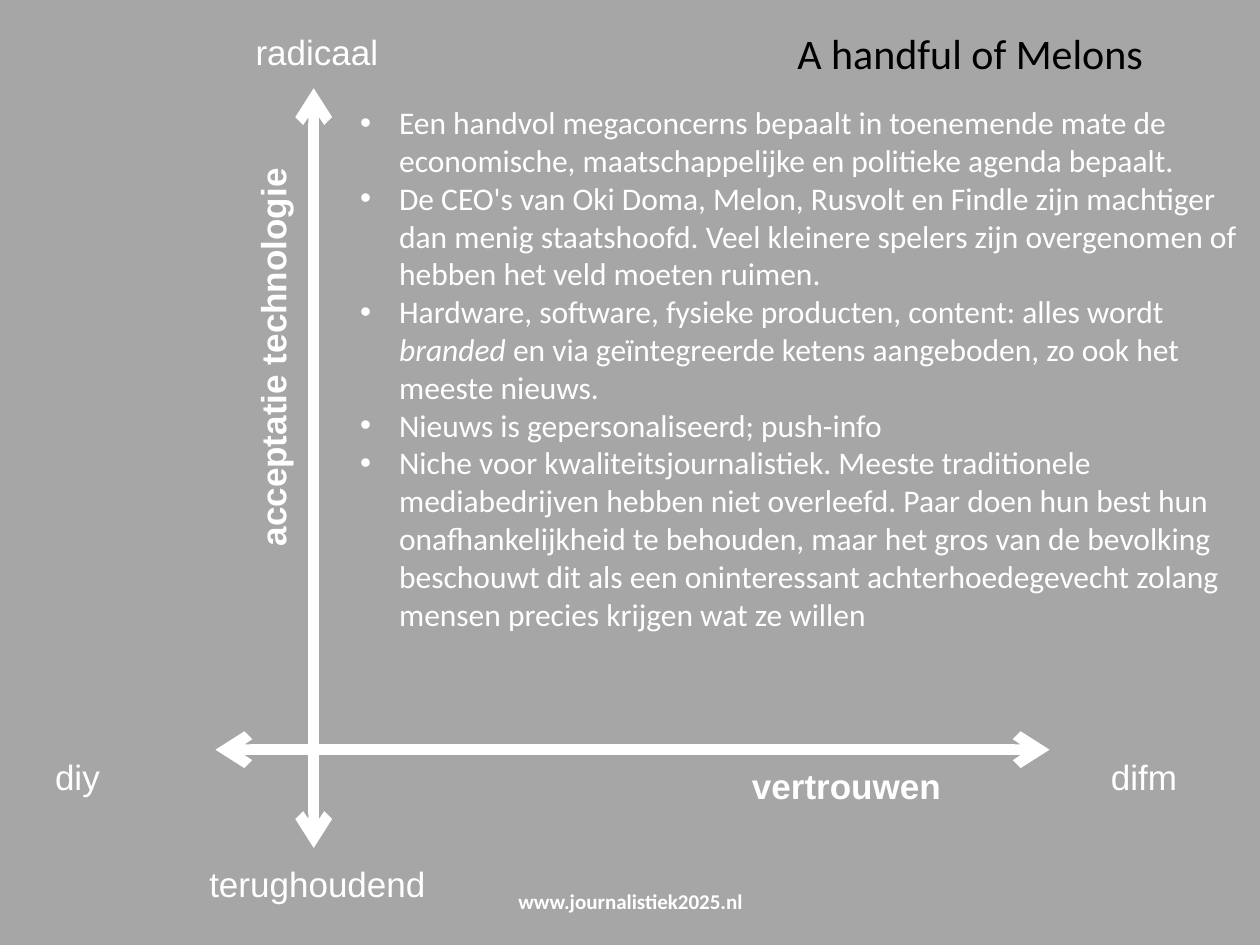
from dataclasses import dataclass

from lxml import etree
from pptx import Presentation
from pptx import util as u
from pptx.dml.color import RGBColor
from pptx.enum import shapes, text
from pptx.oxml.ns import qn

WHITE = RGBColor(0xFF, 0xFF, 0xFF)
BLACK = RGBColor(0, 0, 0)
GREY = RGBColor(0xA6, 0xA6, 0xA6)
CELL = u.Inches(0.1)
COLS, ROWS = 100, 75
LEFT, MID, RIGHT = text.PP_ALIGN.LEFT, text.PP_ALIGN.CENTER, text.PP_ALIGN.RIGHT


@dataclass
class Axis:
    """An arrow between two grid points."""
    start: tuple[float, float]
    end: tuple[float, float]


@dataclass
class Label:
    """A line of text in a box of grid cells."""
    words: str
    box: tuple[float, float, float, float]
    size: int = 20
    font: str = "Arial"
    color: RGBColor = WHITE
    bold: bool = False
    align: text.PP_ALIGN = MID
    anchor: text.MSO_ANCHOR = text.MSO_ANCHOR.TOP
    turn: int = 0


AXES = [
    Axis((24.9, 67.3), (24.9, 7)),
    Axis((17.1, 59.5), (83.3, 59.5)),
]
LABELS = [
    Label("vertrouwen", (58.7, 60.2, 46, 4.4), bold=True, align=LEFT),
    Label("acceptatie technologie", (1.2, 21.7, 40.9, 4.4), bold=True,
          align=LEFT, turn=270),
    Label("difm", (78.7, 59.5, 24.2, 4.4)),
    Label("diy", (-6.7, 59.5, 25.7, 4.4)),
    Label("radicaal", (13.7, 1.9, 22.9, 4.4)),
    Label("terughoudend", (13.8, 68, 22.8, 4.4)),
    Label("A handful of Melons", (59.7, 1.7, 32, 5.1), 24, "Calibri", BLACK,
          align=RIGHT),
    Label("www.journalistiek2025.nl", (34.2, 69.5, 31.7, 4), 12, "Calibri",
          bold=True, anchor=text.MSO_ANCHOR.MIDDLE),
]
BODY = (27.6, 7.7, 72, 52.5)
ITALIC = "branded "
POINTS = [
    ["Een handvol megaconcerns bepaalt in toenemende mate de economische, "
     "maatschappelijke en politieke agenda bepaalt."],
    ["De CEO's van Oki Doma, Melon, Rusvolt en Findle zijn machtiger dan menig "
     "staatshoofd. Veel kleinere spelers zijn overgenomen of hebben het veld "
     "moeten ruimen."],
    ["Hardware, software, fysieke producten, content: alles wordt ", ITALIC,
     "en via geïntegreerde ketens aangeboden, zo ook het meeste nieuws."],
    ["Nieuws is gepersonaliseerd; push-info"],
    ["Niche voor kwaliteitsjournalistiek. Meeste traditionele mediabedrijven "
     "hebben niet overleefd. Paar doen hun best hun onafhankelijkheid te "
     "behouden, maar het gros van de bevolking beschouwt dit als een "
     "oninteressant achterhoedegevecht zolang mensen precies krijgen wat ze "
     "willen"],
]


def grid(*cells: float) -> list[int]:
    """Turn grid cells into lengths."""
    return [round(cell * CELL) for cell in cells]


def style(run, size: int, font: str, color: RGBColor, bold: bool = False) -> None:
    """Format one run."""
    run.font.size = u.Pt(size)
    run.font.name = font
    run.font.color.rgb = color
    run.font.bold = bold


def draw_axis(slide, axis: Axis) -> None:
    """Draw a line with an arrowhead at both ends."""
    line = slide.shapes.add_connector(
        shapes.MSO_CONNECTOR.STRAIGHT, *grid(*axis.start, *axis.end))
    line.line.color.rgb = WHITE
    line.line.width = u.Pt(6)
    props = line.line._get_or_add_ln()
    for end in ("a:headEnd", "a:tailEnd"):
        etree.SubElement(props, qn(end), type="arrow")
    etree.SubElement(line._element.spPr, qn("a:effectLst"))


def draw_label(slide, label: Label) -> None:
    """Draw one label."""
    box = slide.shapes.add_textbox(*grid(*label.box))
    box.rotation = label.turn
    frame = box.text_frame
    frame.word_wrap = True
    frame.vertical_anchor = label.anchor
    frame.text = label.words
    para = frame.paragraphs[0]
    para.alignment = label.align
    style(para.runs[0], label.size, label.font, label.color, label.bold)


def draw_points(slide, points: list[list[str]]) -> None:
    """Draw the bulleted text."""
    frame = slide.shapes.add_textbox(*grid(*BODY)).text_frame
    frame.word_wrap = True
    for num, parts in enumerate(points):
        para = frame.add_paragraph() if num else frame.paragraphs[0]
        props = para._p.get_or_add_pPr()
        indent = u.Inches(0.31)
        props.set("marL", str(indent))
        props.set("indent", str(-indent))
        etree.SubElement(props, qn("a:buFont"), typeface="Arial")
        etree.SubElement(props, qn("a:buChar"), char="•")
        for part in parts:
            run = para.add_run()
            run.text = part
            style(run, 18, "Calibri", WHITE)
            run.font.italic = part == ITALIC


def main() -> None:
    """Build the slide and save it."""
    deck = Presentation()
    deck.slide_width, deck.slide_height = grid(COLS, ROWS)
    slide = deck.slides.add_slide(deck.slide_layouts[6])
    slide.background.fill.solid()
    slide.background.fill.fore_color.rgb = GREY
    for axis in AXES:
        draw_axis(slide, axis)
    for label in LABELS:
        draw_label(slide, label)
    draw_points(slide, POINTS)
    deck.save("out.pptx")


if __name__ == "__main__":
    main()
